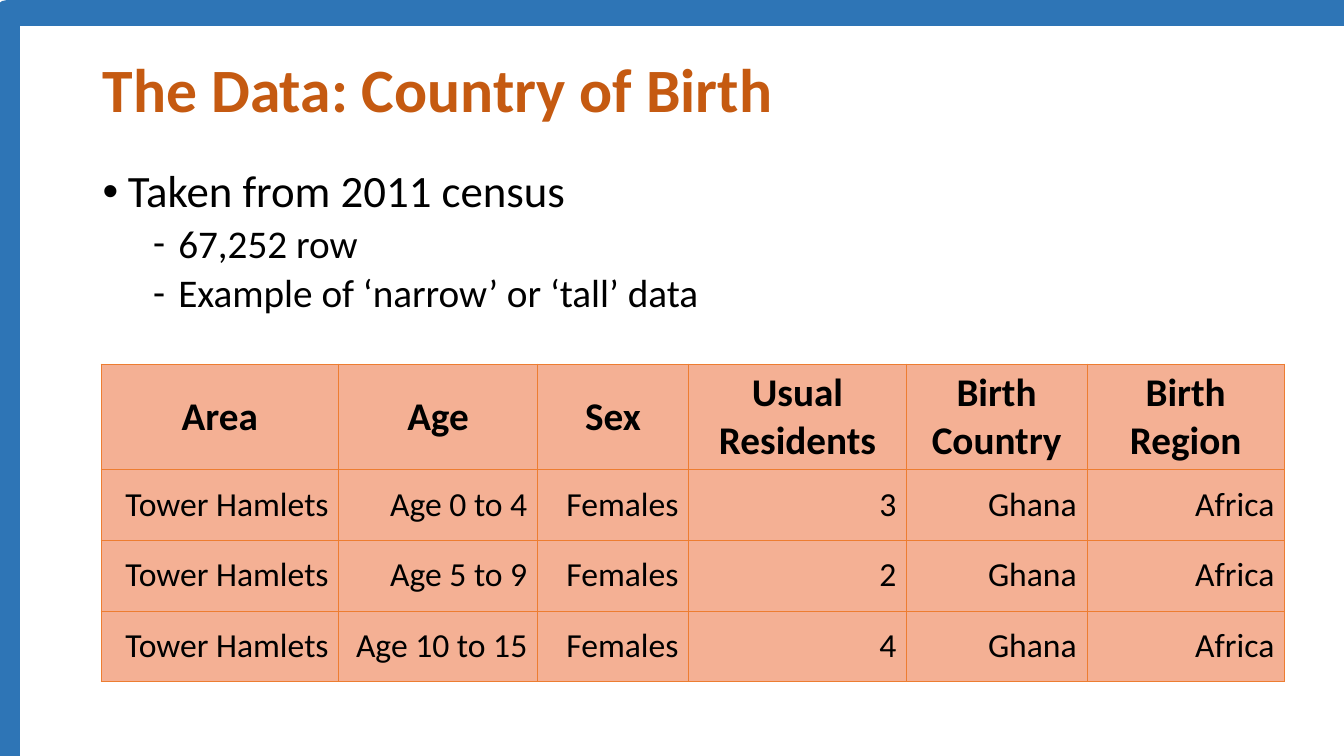
from dataclasses import dataclass

from lxml.etree import SubElement
from pptx import Presentation
from pptx.dml.color import RGBColor
from pptx.enum.shapes import MSO_SHAPE
from pptx.enum.text import MSO_ANCHOR, MSO_AUTO_SIZE, PP_ALIGN
from pptx.oxml.ns import qn
from pptx.util import Inches, Pt


@dataclass(frozen=True)
class Theme:
    font: str = "Calibri"
    frame: str = "2E75B6"
    title: str = "C55A11"
    text: str = "000000"
    cell: str = "F4B094"
    border: str = "ED7D31"
    title_size: int = 44
    level_sizes: tuple = (32, 28)
    header_size: int = 28
    cell_size: int = 24
    frame_width: float = 18
    border_width: float = 0.5


THEME = Theme()
SLIDE_W, SLIDE_H = 13.33, 7.5
MARGIN, CONTENT_W = 0.92, 11.5

BULLETS = [
    (0, "Taken from 2011 census"),
    (1, "67,252 row"),
    (1, "Example of ‘narrow’ or ‘tall’ data"),
]
COLUMN_WIDTHS = [2.36, 1.97, 1.5, 2.16, 1.79, 1.96]
HEADER_HEIGHT, ROW_HEIGHT = 1.05, 0.7
ROWS = [
    ["Area", "Age", "Sex", "Usual Residents", "Birth\nCountry", "Birth\nRegion"],
    ["Tower Hamlets", "Age 0 to 4", "Females", "3", "Ghana", "Africa"],
    ["Tower Hamlets", "Age 5 to 9", "Females", "2", "Ghana", "Africa"],
    ["Tower Hamlets", "Age 10 to 15", "Females", "4", "Ghana", "Africa"],
]


def rgb(value):
    return RGBColor.from_string(value)


def format_runs(p, size, color=THEME.text, bold=False):
    for r in p.runs:
        r.font.name = THEME.font
        r.font.size = Pt(size)
        r.font.bold = bold
        r.font.color.rgb = rgb(color)


def add_frame(slide, box):
    """Outline whose right and bottom edges fall outside the slide."""
    sp = slide.shapes.add_shape(MSO_SHAPE.RECTANGLE, *map(Inches, box))
    sp.shadow.inherit = False
    sp.fill.background()
    sp.line.color.rgb = rgb(THEME.frame)
    sp.line.width = Pt(THEME.frame_width)


def add_title(slide, box, text):
    sp = slide.shapes.title
    sp.left, sp.top, sp.width, sp.height = map(Inches, box)
    tf = sp.text_frame
    tf.text = text
    tf.auto_size = MSO_AUTO_SIZE.NONE
    tf.vertical_anchor = MSO_ANCHOR.MIDDLE
    p = tf.paragraphs[0]
    p.alignment = PP_ALIGN.LEFT
    p.line_spacing = 0.9
    format_runs(p, THEME.title_size, THEME.title, bold=True)


def set_bullet(p, level):
    pPr = p._p.get_or_add_pPr()
    pPr.set("marL", str(Inches(0.25 + 0.5 * level)))
    pPr.set("indent", str(Inches(-0.25)))
    SubElement(pPr, qn("a:buFont"), typeface=("Arial", THEME.font)[level])
    SubElement(pPr, qn("a:buChar"), char="•-"[level])


def add_bullets(slide, box, items):
    tf = slide.shapes.add_textbox(*map(Inches, box)).text_frame
    tf.word_wrap = True
    for i, (level, text) in enumerate(items):
        p = tf.add_paragraph() if i else tf.paragraphs[0]
        p.text = text
        p.level = level
        p.line_spacing = 0.9
        p.space_before = Pt((10, 5)[level])
        set_bullet(p, level)
        format_runs(p, THEME.level_sizes[level])


def set_borders(cell):
    tcPr = cell._tc.get_or_add_tcPr()
    for side in ("lnL", "lnR", "lnT", "lnB"):
        ln = SubElement(tcPr, qn(f"a:{side}"), w=str(Pt(THEME.border_width)))
        fill = SubElement(ln, qn("a:solidFill"))
        SubElement(fill, qn("a:srgbClr"), val=THEME.border)


def add_data_table(slide, left, top, rows):
    heights = [HEADER_HEIGHT] + [ROW_HEIGHT] * (len(rows) - 1)
    box = left, top, sum(COLUMN_WIDTHS), sum(heights)
    table = slide.shapes.add_table(
        len(rows), len(COLUMN_WIDTHS), *map(Inches, box)).table
    table.first_row = table.horz_banding = False
    for column, width in zip(table.columns, COLUMN_WIDTHS):
        column.width = Inches(width)
    for i, (values, height) in enumerate(zip(rows, heights)):
        header = i == 0
        table.rows[i].height = Inches(height)
        for cell, value in zip(table.rows[i].cells, values):
            set_borders(cell)
            cell.fill.solid()
            cell.fill.fore_color.rgb = rgb(THEME.cell)
            cell.vertical_anchor = MSO_ANCHOR.MIDDLE
            p = cell.text_frame.paragraphs[0]
            p.text = value
            p.alignment = PP_ALIGN.CENTER if header else PP_ALIGN.RIGHT
            format_runs(p, THEME.header_size if header else THEME.cell_size,
                        bold=header)


def add_data_slide(prs):
    slide = prs.slides.add_slide(prs.slide_layouts.get_by_name("Title Only"))
    add_frame(slide, (0.07, 0.13, SLIDE_W + 0.06, SLIDE_H + 0.05))
    add_title(slide, (MARGIN, 0.4, CONTENT_W, 1.04), "The Data: Country of Birth")
    add_bullets(slide, (MARGIN, 1.63, CONTENT_W, 1.73), BULLETS)
    add_data_table(slide, 1, 3.61, ROWS)


def main():
    prs = Presentation()
    prs.slide_width, prs.slide_height = Inches(SLIDE_W), Inches(SLIDE_H)
    add_data_slide(prs)
    prs.save("out.pptx")


if __name__ == "__main__":
    main()
